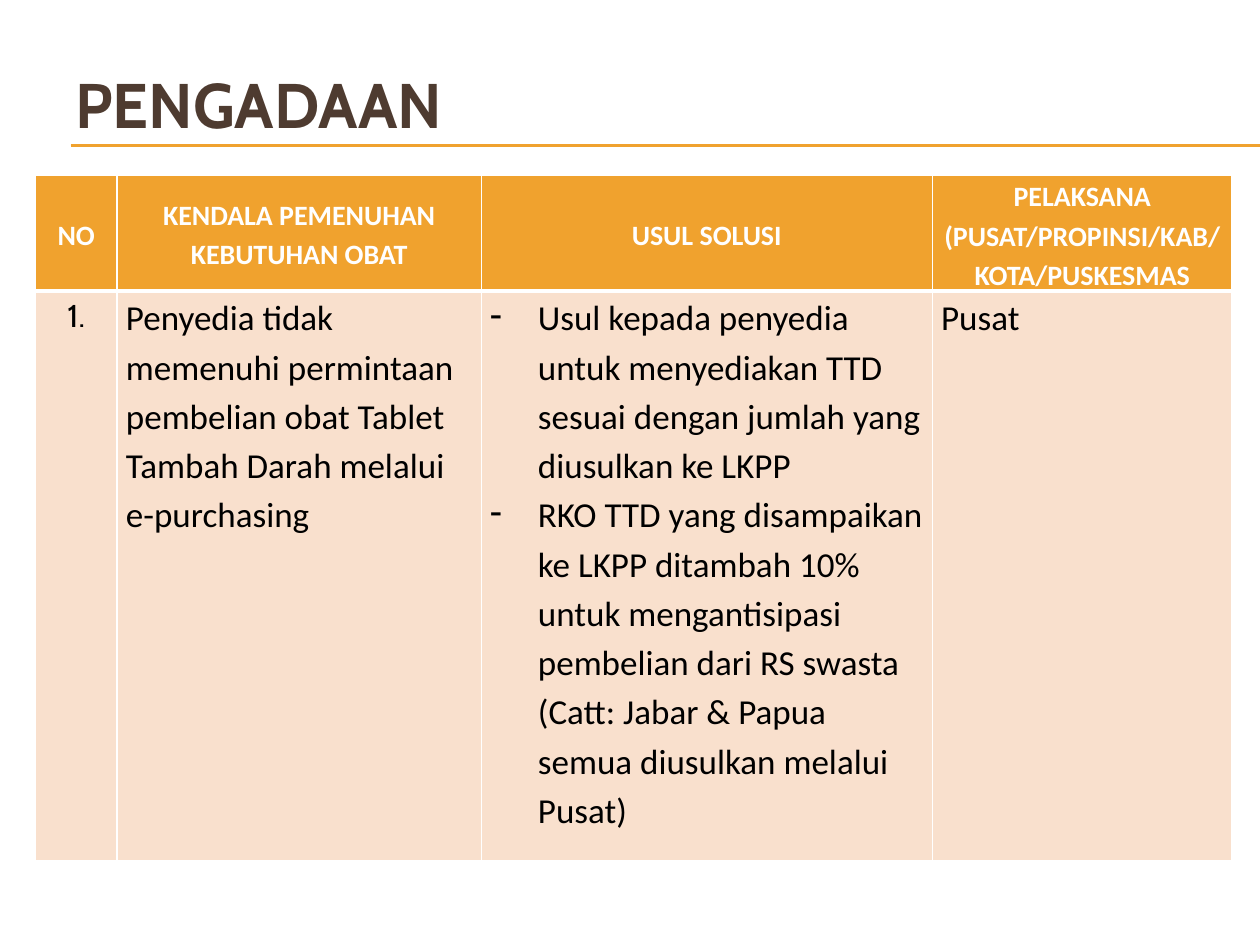
from lxml import etree
from pptx import Presentation
from pptx.dml.color import RGBColor
from pptx.enum.shapes import MSO_CONNECTOR
from pptx.enum.text import MSO_ANCHOR, PP_ALIGN
from pptx.oxml.ns import qn
from pptx.util import Inches, Pt

STRAIGHT = MSO_CONNECTOR.STRAIGHT
MIDDLE, TOP = MSO_ANCHOR.MIDDLE, MSO_ANCHOR.TOP
CENTER, LEFT = PP_ALIGN.CENTER, PP_ALIGN.LEFT

ORANGE, PEACH, BROWN = "F0A22E", "F9E0CD", "4E3B30"
WHITE, BLACK = "FFFFFF", "000000"
COLUMN_WIDTHS = [0.65, 2.89, 3.58, 2.38]
ROW_HEIGHTS = [0.83, 4.52]
HEADERS = [
    "NO",
    "KENDALA PEMENUHAN KEBUTUHAN OBAT",
    "USUL SOLUSI",
    "PELAKSANA (PUSAT/PROPINSI/KAB/KOTA/PUSKESMAS",
]
ANSWERS = [
    "1.",
    "Penyedia tidak memenuhi permintaan pembelian obat Tablet Tambah Darah melalui e-purchasing",
    "Usul kepada penyedia untuk menyediakan TTD sesuai dengan jumlah yang diusulkan ke LKPP\n"
    "RKO TTD yang disampaikan ke LKPP ditambah 10% untuk mengantisipasi pembelian dari RS swasta\n"
    "(Catt: Jabar & Papua semua diusulkan melalui Pusat)",
    "Pusat",
]


def rgb(color):
    """Turn a hex string into a colour."""
    return RGBColor.from_string(color)


def format_text(text_frame, size, font, color, bold=False, align=LEFT, spacing=1.0):
    """Format every paragraph and run of a text frame."""
    for paragraph in text_frame.paragraphs:
        paragraph.alignment = align
        paragraph.line_spacing = spacing
        for run in paragraph.runs:
            run.font.size = Pt(size)
            run.font.name = font
            run.font.bold = bold
            run.font.color.rgb = rgb(color)


def add_rule(slide, top):
    """Add a thin horizontal line under the title."""
    line = slide.shapes.add_connector(
        STRAIGHT, Inches(0.56), Inches(top), Inches(10), Inches(top))
    line.line.color.rgb = rgb(ORANGE)
    line.line.width = Pt(0.75)
    etree.SubElement(line._element.spPr, qn("a:effectLst"))


def add_title(slide, text):
    """Add the slide title."""
    title = slide.shapes.add_textbox(Inches(0.5), Inches(0.36), Inches(9.5), Inches(0.92))
    text_frame = title.text_frame
    text_frame.word_wrap = True
    text_frame.vertical_anchor = MIDDLE
    text_frame.text = text
    format_text(text_frame, 36, "Cabin", BROWN, bold=True)


def set_borders(cell, top=1, bottom=1):
    """Draw white borders, with widths in points."""
    properties = cell._tc.get_or_add_tcPr()
    widths = {"a:lnL": 1, "a:lnR": 1, "a:lnT": top, "a:lnB": bottom}
    for index, (tag, width) in enumerate(widths.items()):
        border = etree.Element(qn(tag), w=str(Pt(width)))
        fill = etree.SubElement(border, qn("a:solidFill"))
        etree.SubElement(fill, qn("a:srgbClr"), val=WHITE)
        properties.insert(index, border)


def fill_cell(cell, text, fill, anchor, narrow=True):
    """Set the text, fill, anchor and margins of a cell."""
    cell.text_frame.text = text
    cell.fill.solid()
    cell.fill.fore_color.rgb = rgb(fill)
    cell.vertical_anchor = anchor
    if narrow:
        cell.margin_left = cell.margin_right = Inches(0.07)
        cell.margin_top = cell.margin_bottom = 0


def indent_paragraph(paragraph, dash):
    """Indent a paragraph, with a hanging dash if wanted."""
    properties = paragraph._p.get_or_add_pPr()
    properties.set("marL", str(Inches(0.38)))
    properties.set("indent", str(Inches(-0.38 if dash else 0)))
    if dash:
        etree.SubElement(properties, qn("a:buChar"), char="-")


def add_solution_table(slide):
    """Add the table of obstacles, solutions and those in charge."""
    frame = slide.shapes.add_table(
        2, 4, Inches(0.28), Inches(1.39), Inches(sum(COLUMN_WIDTHS)), Inches(sum(ROW_HEIGHTS)))
    table = frame.table
    for column, width in zip(table.columns, COLUMN_WIDTHS):
        column.width = Inches(width)
    for row, height in zip(table.rows, ROW_HEIGHTS):
        row.height = Inches(height)

    for index, (header, answer) in enumerate(zip(HEADERS, ANSWERS)):
        cell = table.cell(0, index)
        fill_cell(cell, header, ORANGE, MIDDLE)
        format_text(cell.text_frame, 16, "Calibri", WHITE, True, CENTER, 1.15)
        set_borders(cell, bottom=3)

        cell = table.cell(1, index)
        is_number = index == 0
        fill_cell(cell, answer, PEACH, TOP, narrow=not is_number)
        if is_number:
            format_text(cell.text_frame, 18, "Cabin", BLACK, align=CENTER)
        else:
            format_text(cell.text_frame, 20, "Calibri", BLACK, spacing=1.15)
        set_borders(cell, top=3)

    for index, paragraph in enumerate(table.cell(1, 2).text_frame.paragraphs):
        indent_paragraph(paragraph, dash=index < 2)


def main():
    """Build and save the slide."""
    presentation = Presentation()
    presentation.slide_width = Inches(10)
    presentation.slide_height = Inches(7.5)
    slide = presentation.slides.add_slide(presentation.slide_layouts[6])
    for top in (1.15, 1.16):
        add_rule(slide, top)
    add_title(slide, "PENGADAAN")
    add_solution_table(slide)
    presentation.save("out.pptx")


if __name__ == "__main__":
    main()
